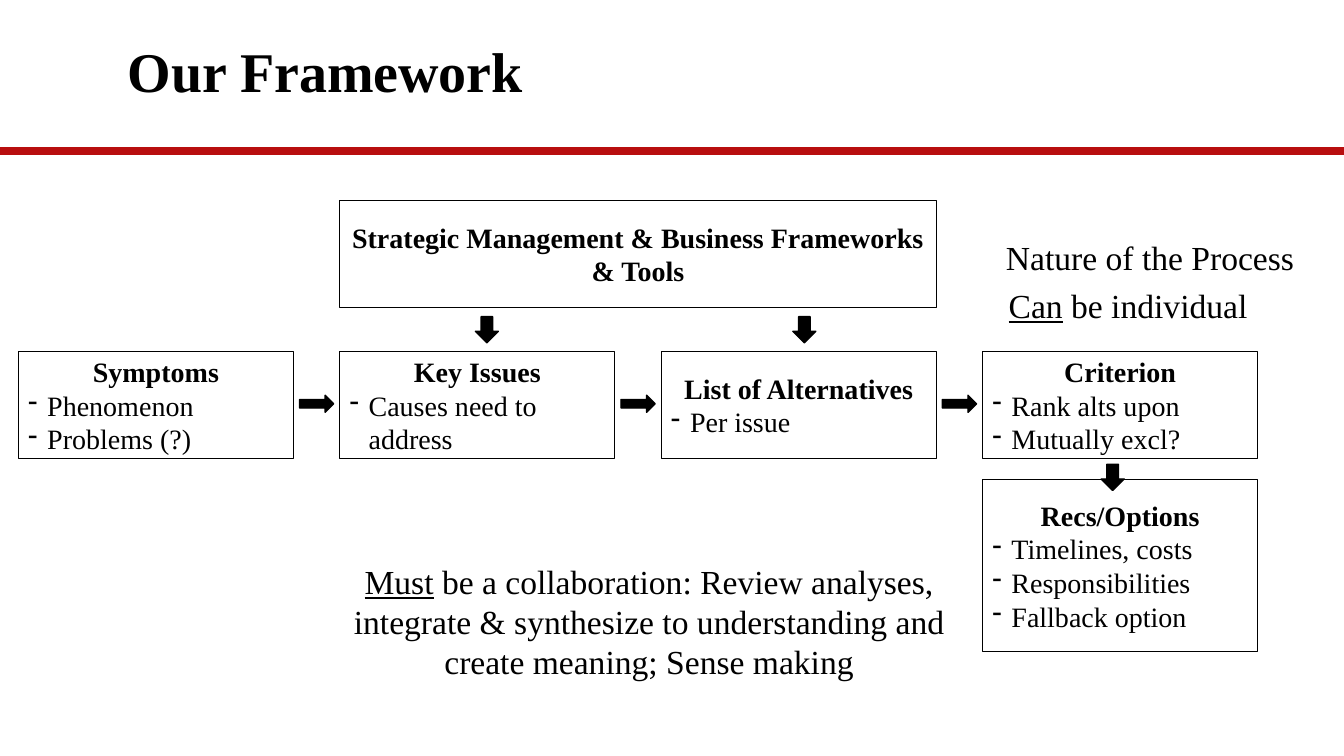
from lxml import etree
from pptx import Presentation
from pptx.dml.color import RGBColor
from pptx.enum.shapes import MSO_CONNECTOR, MSO_SHAPE
from pptx.enum.text import MSO_ANCHOR, MSO_AUTO_SIZE, PP_ALIGN
from pptx.oxml.ns import qn
from pptx.util import Cm, Pt

RECT = MSO_SHAPE.RECTANGLE
ARROW = MSO_SHAPE.RIGHT_ARROW
STRAIGHT = MSO_CONNECTOR.STRAIGHT
MIDDLE = MSO_ANCHOR.MIDDLE
TOP = MSO_ANCHOR.TOP
GROW = MSO_AUTO_SIZE.SHAPE_TO_FIT_TEXT
LEFT = PP_ALIGN.LEFT
CENTER = PP_ALIGN.CENTER

FACE = "Times New Roman"
BLACK = "000000"
RED = "B80E0F"
WIDE, HIGH = 33.87, 19.05
BOX_W, BOX_H = 6.94, 2.69
STEP = 8.1
ROW_X, ROW_Y = 0.46, 8.86

STEPS = [
    ("Symptoms", ["Phenomenon", "Problems (?)"]),
    ("Key Issues", ["Causes need to address"]),
    ("List of Alternatives", ["Per issue"]),
    ("Criterion", ["Rank alts upon", "Mutually excl?"]),
]
RECS = ("Recs/Options", ["Timelines, costs", "Responsibilities", "Fallback option"])
TOOLS = "Strategic Management & Business Frameworks & Tools"
NOTES = [
    ((7.62, 14, 17.48, 3.33), CENTER, "Must",
     " be a collaboration: Review analyses, integrate & synthesize to "
     "understanding and create meaning; Sense making"),
    ((25.1, 5.84, 8.15, 1.27), LEFT, "", "Nature of the Process"),
    ((25.17, 7.04, 7.09, 1.27), LEFT, "Can", " be individual"),
]


def paint(code):
    return RGBColor.from_string(code)


def style(font, **extra):
    look = {"name": FACE, "size": Pt(20), "bold": False, **extra}
    for key, value in look.items():
        setattr(font, key, value)
    font.color.rgb = paint(BLACK)


def set_frame(frame, anchor):
    look = {"word_wrap": True, "vertical_anchor": anchor,
            "margin_left": Cm(0.25), "margin_right": Cm(0.25),
            "margin_top": Cm(0.13), "margin_bottom": Cm(0.13)}
    for key, value in look.items():
        setattr(frame, key, value)


def add_dash(para):
    props = para._p.get_or_add_pPr()
    props.set("marL", str(Cm(0.48)))
    props.set("indent", str(-Cm(0.48)))
    tint = etree.SubElement(props, qn("a:buClr"))
    etree.SubElement(tint, qn("a:srgbClr"), val=BLACK)
    etree.SubElement(props, qn("a:buChar"), char="-")


def add_head(slide, box):
    title = slide.shapes.title
    title.left, title.top, title.width, title.height = map(Cm, box)
    set_frame(title.text_frame, MIDDLE)
    para = title.text_frame.paragraphs[0]
    para.text = "Our Framework"
    para.alignment = LEFT
    para.line_spacing = 0.9
    style(para.font, size=Pt(40), bold=True)


def add_rule(slide, y):
    rule = slide.shapes.add_connector(STRAIGHT, 0, Cm(y), Cm(WIDE), Cm(y))
    rule.line.color.rgb = paint(RED)
    rule.line.width = Pt(6)
    etree.SubElement(rule._element.spPr, qn("a:effectLst"))


def add_box(slide, box, head, items=()):
    shape = slide.shapes.add_shape(RECT, *map(Cm, box))
    shape.shadow.inherit = False
    shape.fill.background()
    shape.line.color.rgb = paint(BLACK)
    shape.line.width = Pt(0.75)
    frame = shape.text_frame
    set_frame(frame, MIDDLE)
    para = frame.paragraphs[0]
    para.text = head
    para.alignment = CENTER
    style(para.font, bold=True)
    for item in items:
        para = frame.add_paragraph()
        para.text = item
        para.alignment = LEFT
        add_dash(para)
        style(para.font)


def add_arrow(slide, x, y, wide, high, turn=0):
    box = (x - wide / 2, y - high / 2, wide, high)
    shape = slide.shapes.add_shape(ARROW, *map(Cm, box))
    shape.shadow.inherit = False
    shape.rotation = turn
    shape.fill.solid()
    shape.fill.fore_color.rgb = paint(BLACK)
    shape.line.color.rgb = paint(BLACK)
    shape.line.width = Pt(1)


def add_flow(slide, x, y):
    add_box(slide, (x + STEP, y - 3.81, STEP + BOX_W, BOX_H), TOOLS)
    for spot, drop in ((12.27, 8.31), (20.27, 8.31), (28.04, 12.03)):
        add_arrow(slide, x - ROW_X + spot, y - ROW_Y + drop, 0.66, 0.58, 90)
    for i, (head, items) in enumerate(STEPS):
        left = x + i * STEP
        add_box(slide, (left, y, BOX_W, BOX_H), head, items)
        if i:
            add_arrow(slide, left - (STEP - BOX_W) / 2, y + BOX_H / 2 - 0.03, 0.86, 0.43)
    add_box(slide, (x + 3 * STEP, y + 3.23, BOX_W, 4.32), *RECS)


def add_note(slide, box, align, stress, rest):
    note = slide.shapes.add_textbox(*map(Cm, box))
    set_frame(note.text_frame, TOP)
    note.text_frame.auto_size = GROW
    para = note.text_frame.paragraphs[0]
    para.alignment = align
    for text, under in ((stress, True), (rest, False)):
        if text:
            run = para.add_run()
            run.text = text
            style(run.font, size=Pt(24), underline=under)


def main():
    deck = Presentation()
    deck.slide_width, deck.slide_height = Cm(WIDE), Cm(HIGH)
    slide = deck.slides.add_slide(deck.slide_layouts[5])
    add_rule(slide, 3.81)
    add_head(slide, (2.97, 0.36, 27.94, 3.05))
    add_flow(slide, ROW_X, ROW_Y)
    for note in NOTES:
        add_note(slide, *note)
    deck.save("out.pptx")


if __name__ == "__main__":
    main()
